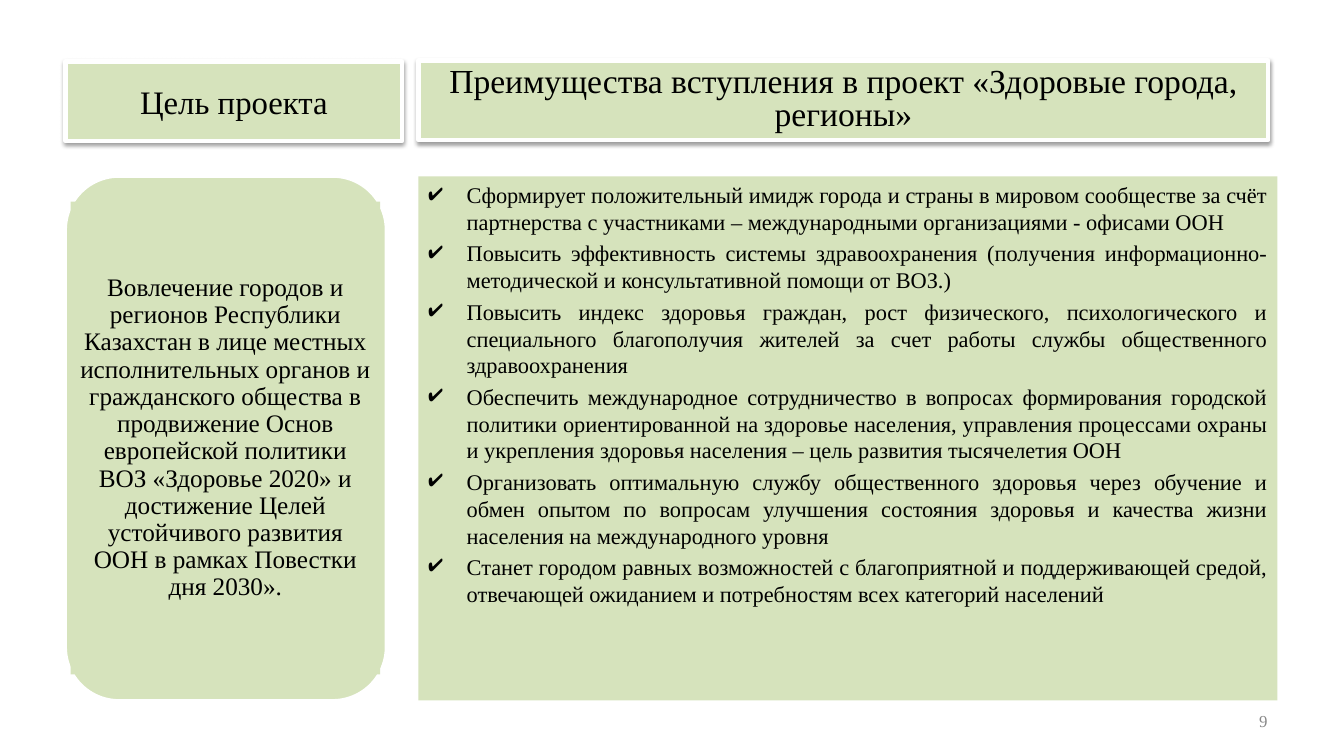
from dataclasses import dataclass

from lxml.etree import SubElement
from pptx import Presentation
from pptx.dml.color import RGBColor
from pptx.enum.shapes import MSO_SHAPE
from pptx.enum.text import MSO_ANCHOR, MSO_AUTO_SIZE, PP_ALIGN
from pptx.oxml.ns import qn
from pptx.shapes.autoshape import Shape
from pptx.slide import Slide
from pptx.text.text import _Paragraph as Para
from pptx.util import Inches, Pt


@dataclass(frozen=True)
class Theme:
    face: str = "Times New Roman"
    green: str = "D6E3BC"
    white: str = "FFFFFF"
    black: str = "000000"
    grey: str = "888888"
    head: float = 24
    goal: float = 23.4
    aim: float = 18
    item: float = 16
    page: float = 12


@dataclass(frozen=True)
class Box:
    left: float
    top: float
    width: float
    height: float
    texts: tuple[str, ...] = ()
    size: float = 18
    align: PP_ALIGN = PP_ALIGN.CENTER
    anchor: MSO_ANCHOR = MSO_ANCHOR.MIDDLE
    pad: tuple[float, float] = (0.1, 0.05)
    space: float = 1
    border: float = 0
    kind: MSO_SHAPE = MSO_SHAPE.RECTANGLE
    color: str = Theme.black
    raised: bool = False
    ticks: bool = False


THEME = Theme()

GAINS = (
    "Сформирует положительный имидж города и страны в мировом сообществе за счёт партнерства с участниками – международными организациями - офисами ООН",
    "Повысить эффективность системы здравоохранения (получения информационно-методической и консультативной помощи от ВОЗ.)",
    "Повысить индекс здоровья граждан, рост физического, психологического и специального благополучия жителей за счет работы службы общественного здравоохранения",
    "Обеспечить международное сотрудничество в вопросах формирования городской политики ориентированной на здоровье населения, управления процессами охраны и укрепления здоровья населения – цель развития тысячелетия ООН",
    "Организовать оптимальную службу общественного здоровья через обучение и обмен опытом по вопросам улучшения состояния здоровья и качества жизни населения на международного уровня",
    "Станет городом равных возможностей с благоприятной и поддерживающей средой, отвечающей ожиданием и потребностям всех категорий населений",
)
AIM = "Вовлечение городов и регионов Республики Казахстан в лице местных исполнительных органов и гражданского общества в продвижение Основ европейской политики ВОЗ «Здоровье 2020» и достижение Целей устойчивого развития ООН в рамках Повестки дня 2030»."

TITLE = Box(4.15, 0.6, 8.43, 0.79,
            ("Преимущества вступления в проект «Здоровые города, регионы»",),
            THEME.head, space=0.8, border=3, raised=True)
PANELS = (
    Box(4.15, 1.75, 8.52, 5.2, GAINS, THEME.item, PP_ALIGN.JUSTIFY,
        MSO_ANCHOR.TOP, ticks=True),
    Box(0.65, 1.75, 3.18, 5.2, border=2, kind=MSO_SHAPE.ROUNDED_RECTANGLE),
    Box(0.7, 2, 3.07, 4.69, (AIM,), THEME.aim, pad=(0.07, 0.07), space=0.9),
    Box(0.65, 0.61, 3.34, 0.79, ("Цель проекта",), THEME.goal,
        border=3, raised=True),
)
PAGE = Box(9.56, 6.95, 3.11, 0.4, ("9",), THEME.page, PP_ALIGN.RIGHT,
           color=THEME.grey)


def add_tick(para: Para) -> None:
    props = para._p.get_or_add_pPr()
    props.set("marL", str(Inches(0.38)))
    props.set("indent", str(-Inches(0.38)))
    tint = SubElement(props, qn("a:buClr"))
    SubElement(tint, qn("a:srgbClr"), val=THEME.black)
    SubElement(props, qn("a:buChar"), char="✔")


def add_shade(shape: Shape) -> None:
    effects = shape._element.spPr.find(qn("a:effectLst"))
    shade = SubElement(effects, qn("a:outerShdw"), blurRad=str(Pt(3.1)),
                       dist=str(Pt(1.6)), dir="5400000", rotWithShape="0")
    tint = SubElement(shade, qn("a:srgbClr"), val=THEME.black)
    SubElement(tint, qn("a:alpha"), val="38000")


def place(shape: Shape, box: Box) -> None:
    shape.left, shape.top = Inches(box.left), Inches(box.top)
    shape.width, shape.height = Inches(box.width), Inches(box.height)


def paint(shape: Shape, box: Box) -> None:
    shape.fill.solid()
    shape.fill.fore_color.rgb = RGBColor.from_string(THEME.green)
    if box.border:
        shape.line.color.rgb = RGBColor.from_string(THEME.white)
        shape.line.width = Pt(box.border)
    else:
        shape.line.fill.background()
    shape.shadow.inherit = False
    if box.raised:
        add_shade(shape)


def write(shape: Shape, box: Box) -> None:
    frame = shape.text_frame
    frame.word_wrap = True
    frame.auto_size = MSO_AUTO_SIZE.NONE
    frame.vertical_anchor = box.anchor
    frame.margin_left = frame.margin_right = Inches(box.pad[0])
    frame.margin_top = frame.margin_bottom = Inches(box.pad[1])
    for index, text in enumerate(box.texts):
        para = frame.add_paragraph() if index else frame.paragraphs[0]
        para.text = text
        if box.ticks:
            add_tick(para)
        para.alignment = box.align
        para.line_spacing = box.space
        if index:
            para.space_before = Pt(3.2)
        para.font.name = THEME.face
        para.font.size = Pt(box.size)
        para.font.color.rgb = RGBColor.from_string(box.color)


def add_panel(slide: Slide, box: Box) -> None:
    shape = slide.shapes.add_shape(box.kind, 0, 0, 0, 0)
    place(shape, box)
    paint(shape, box)
    if box.texts:
        write(shape, box)


def add_title(slide: Slide, box: Box) -> None:
    title = slide.shapes.title
    place(title, box)
    paint(title, box)
    write(title, box)


def add_page(slide: Slide, box: Box) -> None:
    label = slide.shapes.add_textbox(0, 0, 0, 0)
    place(label, box)
    write(label, box)


def main() -> None:
    deck = Presentation()
    deck.slide_width, deck.slide_height = Inches(13.33), Inches(7.5)
    slide = deck.slides.add_slide(deck.slide_layouts[5])
    add_title(slide, TITLE)
    for box in PANELS:
        add_panel(slide, box)
    add_page(slide, PAGE)
    deck.save("out.pptx")


if __name__ == "__main__":
    main()
